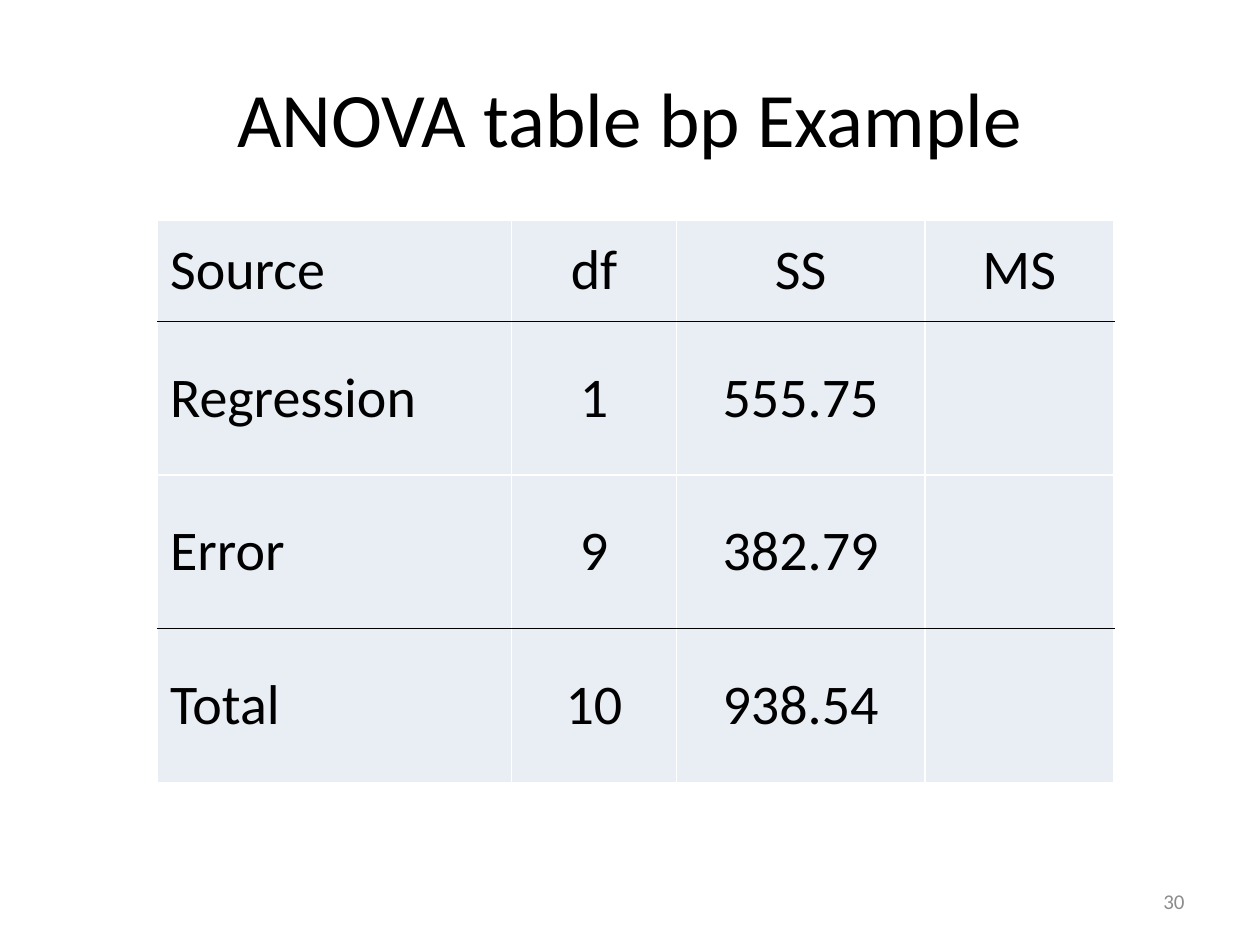
from pptx import Presentation
from pptx.dml.color import RGBColor
from pptx.enum.text import MSO_ANCHOR, PP_ALIGN
from pptx.oxml.ns import qn
from pptx.util import Inches, Pt
from lxml.etree import SubElement

BLACK = RGBColor(0x00, 0x00, 0x00)
WHITE = RGBColor(0xFF, 0xFF, 0xFF)
GRAY = RGBColor(0x8C, 0x8C, 0x8C)
CELL_FILL = RGBColor(0xE9, 0xED, 0xF4)

ROWS = [
    ["Source", "df", "SS", "MS"],
    ["Regression", "1", "555.75", ""],
    ["Error", "9", "382.79", ""],
    ["Total", "10", "938.54", ""],
]
COL_WIDTHS = [2.81, 1.31, 1.97, 1.5]
ROW_HEIGHTS = [0.8, 1.22, 1.22, 1.22]
RULED_ROWS = [0, 2]  # rows with a black rule beneath


def format_text(tf, size, color, align):
    tf.vertical_anchor = MSO_ANCHOR.MIDDLE
    p = tf.paragraphs[0]
    p.alignment = align
    for r in p.runs:
        r.font.name = "Calibri"
        r.font.size = Pt(size)
        r.font.color.rgb = color


def set_border(cell, side, color):
    """Add a 1 pt border; side is L, R, T or B, in that order."""
    ln = SubElement(cell._tc.get_or_add_tcPr(), qn(f"a:ln{side}"), w=str(Pt(1)))
    fill = SubElement(ln, qn("a:solidFill"))
    SubElement(fill, qn("a:srgbClr"), val=str(color))


prs = Presentation()
prs.slide_width, prs.slide_height = Inches(10), Inches(7.5)
s = prs.slides.add_slide(prs.slide_layouts[5])

title = s.shapes.title
title.left, title.top = Inches(0.5), Inches(0.3)
title.width, title.height = Inches(9), Inches(1.25)
title.text_frame.text = "ANOVA table bp Example"
format_text(title.text_frame, 44, BLACK, PP_ALIGN.CENTER)

table = s.shapes.add_table(
    len(ROWS), len(COL_WIDTHS), Inches(1.25), Inches(1.75),
    Inches(sum(COL_WIDTHS)), Inches(sum(ROW_HEIGHTS))).table
table.first_row = False
table.horz_banding = False
for column, width in zip(table.columns, COL_WIDTHS):
    column.width = Inches(width)
for row, height in zip(table.rows, ROW_HEIGHTS):
    row.height = Inches(height)

for i, values in enumerate(ROWS):
    for j, value in enumerate(values):
        cell = table.cell(i, j)
        cell.vertical_anchor = MSO_ANCHOR.MIDDLE
        set_border(cell, "L", WHITE)
        set_border(cell, "R", WHITE)
        set_border(cell, "T", BLACK if i - 1 in RULED_ROWS else WHITE)
        set_border(cell, "B", BLACK if i in RULED_ROWS else WHITE)
        cell.fill.solid()
        cell.fill.fore_color.rgb = CELL_FILL
        if value:
            cell.text_frame.text = value
            format_text(cell.text_frame, 32, BLACK,
                        PP_ALIGN.CENTER if j else PP_ALIGN.LEFT)

number = s.shapes.add_textbox(Inches(7.17), Inches(6.95), Inches(2.33), Inches(0.4))
number.text_frame.word_wrap = True
number.text_frame.text = "30"
format_text(number.text_frame, 12, GRAY, PP_ALIGN.RIGHT)

prs.save("out.pptx")
